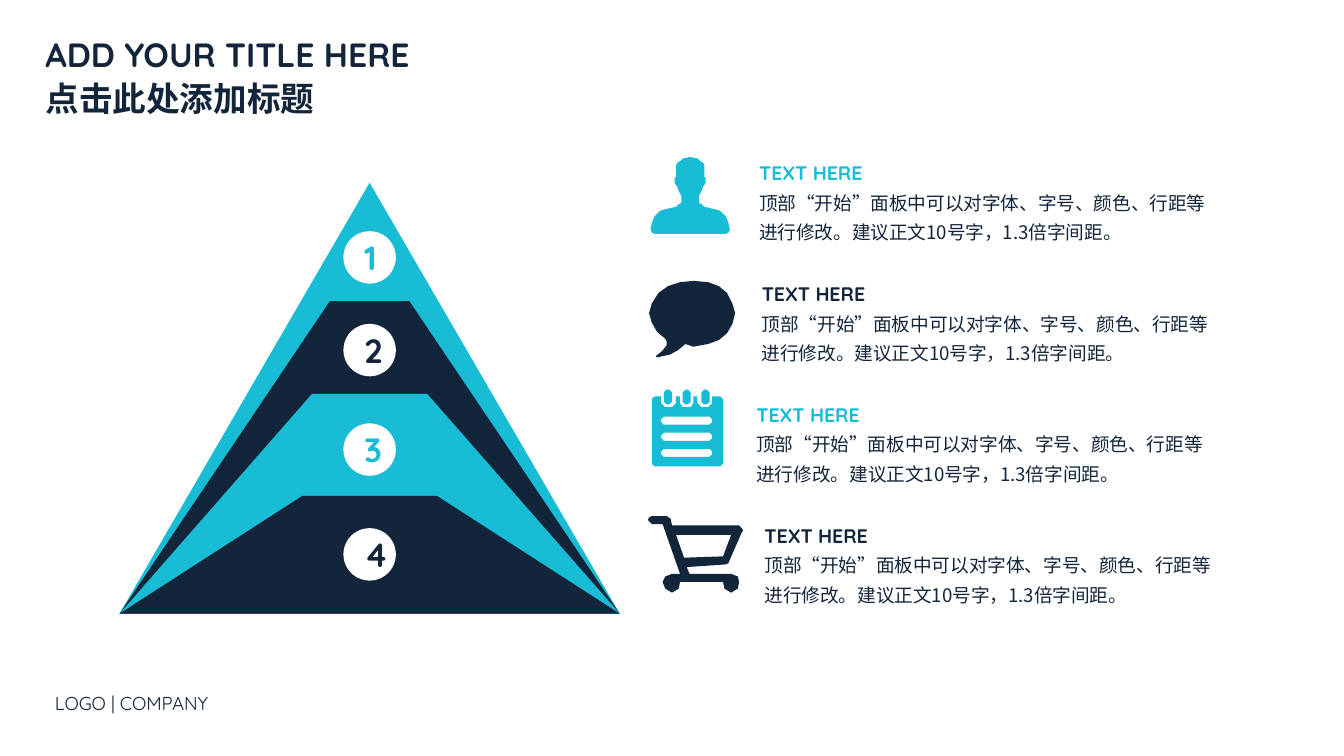
from pptx import Presentation
from pptx import util as u
from pptx.dml.color import RGBColor
from pptx.enum import shapes, text
from pptx.oxml.ns import qn
from lxml import etree

CYAN = RGBColor(0x18, 0xBD, 0xD5)
NAVY = RGBColor(0x12, 0x25, 0x3A)
WHITE = RGBColor(0xFF, 0xFF, 0xFF)
LATIN, CHINESE, QUOTE = "Quicksand", "Noto Sans CJK SC", "Arial"

CELL = u.Inches(0.01)
COLUMNS, ROWS = 1000, 562.5
PYRAMID_LEFT, PYRAMID_WIDTH, PYRAMID_BASE = 89, 372, 456.5
BADGE = 39
ENTRY_TOP, ENTRY_STEP = 115, 90

TIERS = [
    (136, None, 172, CYAN),
    (224, 0.673, 241, NAVY),
    (293, 0.876, 315, CYAN),
    (369, 1.552, 393, NAVY),
]
BODY = [
    ("顶部", CHINESE),
    ("“", QUOTE),
    ("开始", CHINESE),
    ("”", QUOTE),
    ("面板中可以对字体、字号、颜色、行距等进行修改。建议正文10号字，1.3倍字间距。", CHINESE),
]
PERSON_HALF = [
    (513, 117), (508, 118), (506, 120), (504, 121), (503, 123), (503, 132),
    (502, 132), (502, 136), (503, 138), (504, 139), (505, 142), (507, 146),
    (507, 151), (505, 152), (503, 154), (498, 155), (494, 156), (491, 157),
    (487, 161), (485, 166), (484, 171), (485, 173), (487, 174),
]
BUBBLE = [
    (516, 209), (527, 210), (535, 213), (541, 218), (545, 226), (547, 233),
    (545, 241), (541, 248), (535, 253), (527, 256), (516, 258), (510, 256),
    (504, 261), (498, 264), (493, 265), (489, 266), (488, 265), (493, 261),
    (496, 257), (496, 254), (495, 252), (489, 247), (485, 240), (483, 233),
    (485, 226), (490, 218), (497, 213), (506, 210),
]
CART_BASKET = [(503, 398), (509, 415), (538, 414), (544, 398)]
CART_FRAME = [
    (485, 384), (496, 384), (499, 386), (500, 391), (550, 391), (552, 393),
    (553, 395), (552, 396), (542, 419), (540, 420), (511, 422), (513, 427),
    (544, 427), (549, 429), (550, 433), (549, 438), (544, 441), (539, 438),
    (538, 433), (506, 433), (505, 438), (500, 441), (495, 438), (493, 433),
    (495, 429), (500, 427), (506, 427), (493, 390), (485, 390), (483, 388),
    (482, 387), (483, 385),
]


def cells(*counts):
    return [u.Emu(round(count * CELL)) for count in counts]


def bevelled(left, top, right, bottom, cut):
    return [
        (left + cut, top), (right - cut, top), (right, top + cut),
        (right, bottom - cut), (right - cut, bottom), (left + cut, bottom),
        (left, bottom - cut), (left, top + cut),
    ]


def person():
    mirrored = [(1027 - x, y) for x, y in reversed(PERSON_HALF)]
    return [PERSON_HALF + mirrored]


def notepad():
    contours = [bevelled(485, 295, 538, 347, 2)]
    contours += [bevelled(492, top, 530, top + 6, 2) for top in (310, 322, 334)]
    for left in (492, 505.5, 519):
        right = left + 11
        contours.append([
            (left, 295), (left, 300), (left + 3, 303),
            (right - 3, 303), (right, 300), (right, 295),
        ])
        contours.append(bevelled(left + 2.5, 290, right - 2.5, 301, 2))
    return contours


def paint(shape, color):
    shape.shadow.inherit = False
    shape.fill.solid()
    shape.fill.fore_color.rgb = color
    shape.line.fill.background()


def add_preset(page, preset, left, top, width, height, color):
    shape = page.shapes.add_shape(preset, *cells(left, top, width, height))
    paint(shape, color)
    return shape


def add_icon(page, contours, color):
    first, *others = contours
    builder = page.shapes.build_freeform(*first[0], scale=float(CELL))
    builder.add_line_segments(first[1:], close=True)
    for contour in others:
        builder.move_to(*contour[0])
        builder.add_line_segments(contour[1:], close=True)
    paint(builder.convert_to_shape(), color)


def add_run(para, words, font, size, color, bold=False):
    span = para.add_run()
    span.text = words
    span.font.name = font
    span.font.size = u.Pt(size)
    span.font.bold = bold
    span.font.color.rgb = color
    east_asian = etree.Element(qn("a:ea"), typeface=CHINESE)
    span.font._element.find(qn("a:latin")).addnext(east_asian)


def add_box(page, left, top, width, height, wrap=True):
    box = page.shapes.add_textbox(*cells(left, top, width, height))
    frame = box.text_frame
    frame.word_wrap = wrap
    frame.auto_size = text.MSO_AUTO_SIZE.SHAPE_TO_FIT_TEXT
    return frame


def add_title(page):
    frame = add_box(page, 24, 17, 296, 76)
    english, chinese = frame.paragraphs[0], frame.add_paragraph()
    for para, words in ((english, "ADD YOUR TITLE HERE"), (chinese, "点击此处添加标题")):
        para.line_spacing = 1.1
        add_run(para, words, LATIN, 18, NAVY, True)


def add_tier(page, number, top, slope, badge_top, color):
    kinds = shapes.MSO_SHAPE
    preset = kinds.TRAPEZOID if slope else kinds.ISOSCELES_TRIANGLE
    tier = add_preset(page, preset, PYRAMID_LEFT, top, PYRAMID_WIDTH, PYRAMID_BASE - top, color)
    if slope:
        tier.adjustments[0] = slope
    badge_left = PYRAMID_LEFT + (PYRAMID_WIDTH - BADGE) / 2
    badge = add_preset(page, kinds.OVAL, badge_left, badge_top, BADGE, BADGE, WHITE)
    badge.text_frame.vertical_anchor = text.MSO_ANCHOR.MIDDLE
    para = badge.text_frame.paragraphs[0]
    para.alignment = text.PP_ALIGN.CENTER
    add_run(para, str(number), LATIN, 18, color, True)


def add_entry(page, row, left, contours, color):
    frame = add_box(page, left, ENTRY_TOP + row * ENTRY_STEP, 354, 71)
    add_run(frame.paragraphs[0], "TEXT HERE", LATIN, 10.5, color, True)
    para = frame.add_paragraph()
    para.line_spacing = 1.3
    for words, font in BODY:
        add_run(para, words, font, 10, NAVY)
    add_icon(page, contours, color)


def main():
    deck = Presentation()
    deck.slide_width, deck.slide_height = cells(COLUMNS, ROWS)
    page = deck.slides.add_slide(deck.slide_layouts[6])
    add_title(page)
    for number, tier in enumerate(TIERS, 1):
        add_tier(page, number, *tier)
    entries = [
        (555, person(), CYAN),
        (557, [BUBBLE], NAVY),
        (553, notepad(), CYAN),
        (559, [CART_BASKET, CART_FRAME], NAVY),
    ]
    for row, entry in enumerate(entries):
        add_entry(page, row, *entry)
    footer = add_box(page, 31, 510, 153, 27, wrap=False)
    add_run(footer.paragraphs[0], "LOGO | COMPANY", LATIN, 10, NAVY)
    deck.save("out.pptx")


if __name__ == "__main__":
    main()
